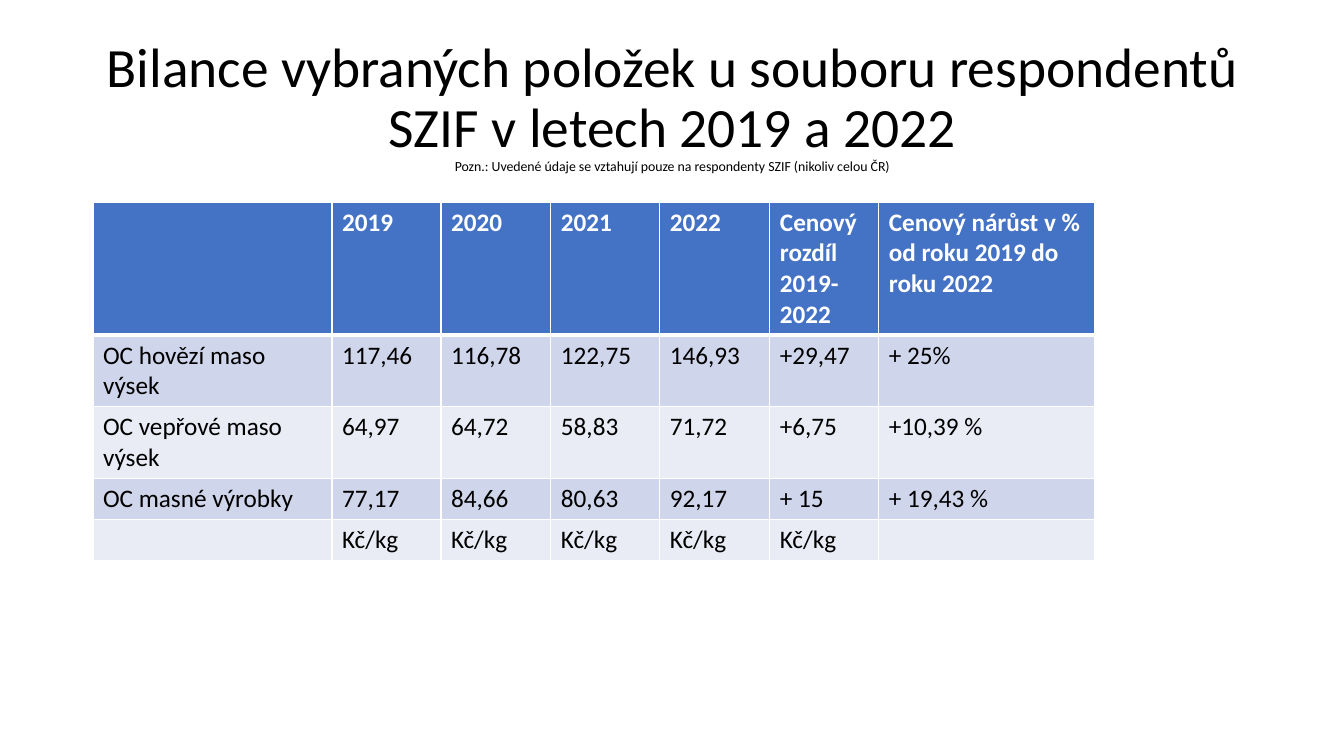
from copy import deepcopy

from lxml import etree
from pptx import Presentation
from pptx.dml.color import RGBColor
from pptx.enum.text import MSO_ANCHOR, MSO_AUTO_SIZE, PP_ALIGN
from pptx.oxml.ns import qn
from pptx.util import Emu, Pt

MIDDLE = MSO_ANCHOR.MIDDLE
CENTER = PP_ALIGN.CENTER
NO_FIT = MSO_AUTO_SIZE.NONE

SCALE = 12192000 / 1344
FONT = "Calibri"
COLORS = {
    "ink": "000000",
    "white": "FFFFFF",
    "head": "4472C4",
    "odd": "CFD5EA",
    "even": "E9EBF5",
}
TITLE = [
    ("Bilance vybraných položek u souboru respondentů", 39.6),
    ("SZIF v letech 2019 a 2022", 39.6),
    ("Pozn.: Uvedené údaje se vztahují pouze na respondenty SZIF (nikoliv celou ČR)", 9.9),
]
UNIT = "Kč/kg"
ROWS = [
    ["", "2019", "2020", "2021", "2022", "Cenový rozdíl 2019-2022",
     "Cenový nárůst v % od roku 2019 do roku 2022"],
    ["OC hovězí maso výsek", "117,46", "116,78", "122,75", "146,93", "+29,47", "+ 25%"],
    ["OC vepřové maso výsek", "64,97", "64,72", "58,83", "71,72", "+6,75", "+10,39 %"],
    ["OC masné výrobky", "77,17", "84,66", "80,63", "92,17", "+ 15", "+ 19,43 %"],
    ["", *[UNIT] * 5, ""],
]
WIDTHS = [239, 109, 110, 109, 110, 109, 216]
HEIGHTS = [130, 71, 71, 41, 41]


def px(size):
    return Emu(round(size * SCALE))


def rgb(name):
    return RGBColor.from_string(COLORS[name])


def add_run(para, text, size, color, bold=False):
    run = para.add_run()
    run.text = text
    font = run.font
    font.name, font.size, font.bold = FONT, Pt(size), bold
    font.color.rgb = rgb(color)
    return run


def add_title(slide, left, top, width, height):
    title = slide.shapes.title
    title.left, title.top = px(left), px(top)
    title.width, title.height = px(width), px(height)
    frame = title.text_frame
    frame.word_wrap = True
    frame.auto_size = NO_FIT
    frame.vertical_anchor = MIDDLE
    frame.margin_bottom = px(17)
    para = frame.paragraphs[0]
    para.alignment = CENTER
    para.line_spacing = 0.9
    for index, (text, size) in enumerate(TITLE):
        if index:
            para.add_line_break()
            para._p[-1].append(deepcopy(run._r.rPr))
        run = add_run(para, text, size, "ink")


def add_border(cell, side, points):
    props = cell._tc.get_or_add_tcPr()
    line = etree.SubElement(props, qn(f"a:ln{side}"), w=str(Pt(points)))
    fill = etree.SubElement(line, qn("a:solidFill"))
    etree.SubElement(fill, qn("a:srgbClr"), val=COLORS["white"])


def fill_cell(cell, text, row):
    for side in "LRTB":
        thick = (row, side) in ((0, "B"), (1, "T"))
        add_border(cell, side, 3 if thick else 1)
    head = row == 0
    cell.fill.solid()
    cell.fill.fore_color.rgb = rgb("head" if head else "odd" if row % 2 else "even")
    if text:
        add_run(cell.text_frame.paragraphs[0], text, 18, "white" if head else "ink", head)
    else:
        cell.text_frame.paragraphs[0].font.size = Pt(18)


def add_prices(slide, left, top):
    frame = slide.shapes.add_table(
        len(ROWS), len(WIDTHS), px(left), px(top), px(sum(WIDTHS)), px(sum(HEIGHTS)))
    table = frame.table
    for column, width in zip(table.columns, WIDTHS):
        column.width = px(width)
    for line, height in zip(table.rows, HEIGHTS):
        line.height = px(height)
    for row, texts in enumerate(ROWS):
        for col, text in enumerate(texts):
            fill_cell(table.cell(row, col), text, row)


def main():
    deck = Presentation()
    deck.slide_width, deck.slide_height = px(1344), px(756)
    slide = deck.slides.add_slide(deck.slide_layouts[5])
    add_title(slide, 93, 40, 1159, 146)
    add_prices(slide, 93, 202)
    deck.save("out.pptx")


if __name__ == "__main__":
    main()
